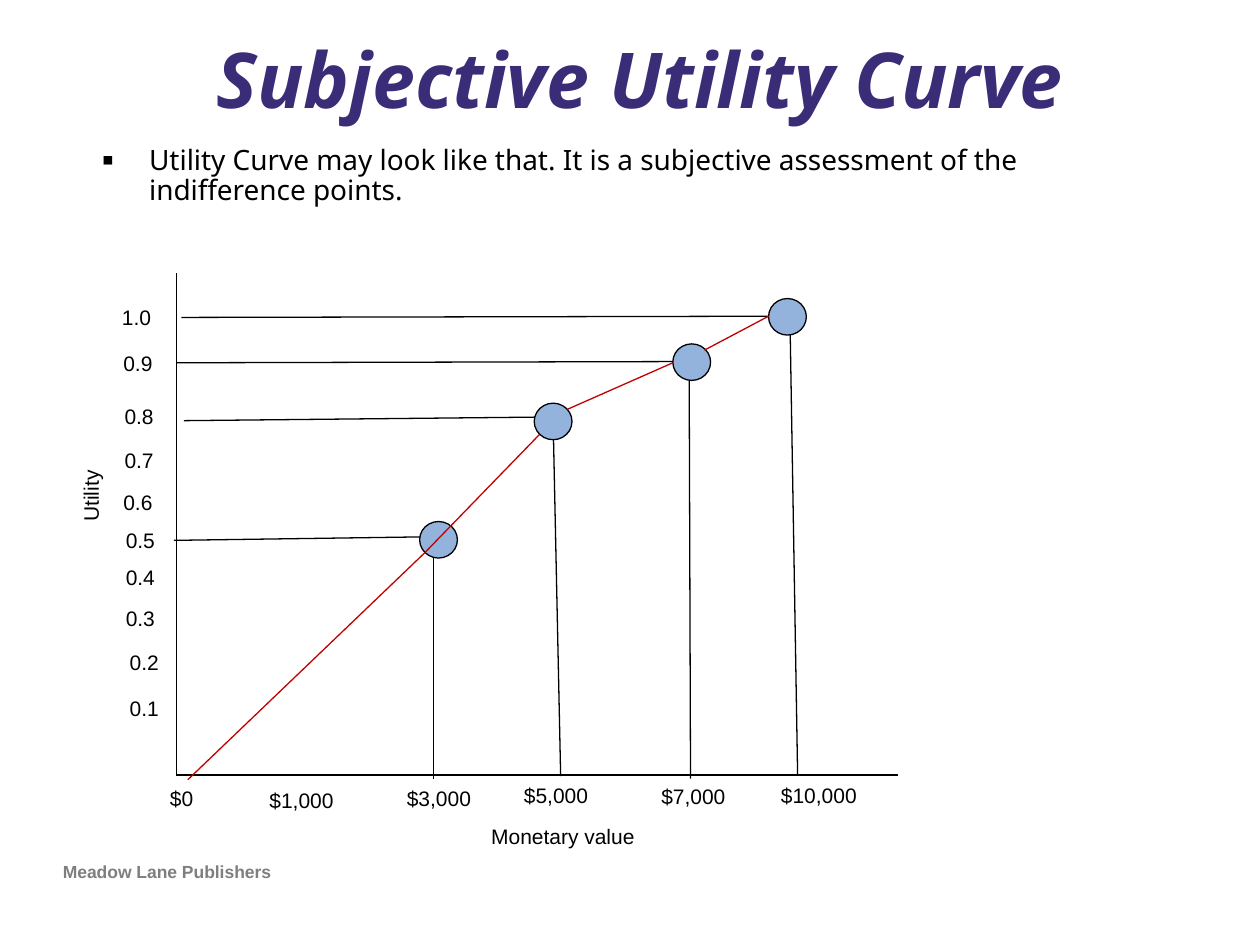
from collections import namedtuple
from dataclasses import dataclass

from lxml.etree import SubElement
from pptx import Presentation
from pptx.dml.color import RGBColor
from pptx.enum.shapes import MSO_CONNECTOR, MSO_SHAPE
from pptx.enum.text import MSO_ANCHOR, MSO_AUTO_SIZE, PP_ALIGN
from pptx.oxml.ns import qn
from pptx.util import Pt

Box = namedtuple("Box", "left top width height")
# One assessed point: its drop line, its guide line and its marker corner
Assessment = namedtuple("Assessment", "drop guide marker")


@dataclass(frozen=True)
class Theme:
    title: RGBColor = RGBColor(0x3A, 0x2C, 0x76)
    ink: RGBColor = RGBColor(0, 0, 0)
    footer: RGBColor = RGBColor(0x7F, 0x7F, 0x7F)
    marker: RGBColor = RGBColor(0x93, 0xB3, 0xDD)
    curve: RGBColor = RGBColor(0xC0, 0, 0)
    heading_font: str = "Noto Sans"
    label_font: str = "Arial"
    title_size: int = 44
    body_size: int = 16
    label_size: int = 12
    footer_size: int = 10
    line_width: float = 0.75


THEME = Theme()
LABEL_HEIGHT = 21.6
MARKER_WIDTH, MARKER_HEIGHT = 21.6, 20.9

# All chart places are offsets from the top left corner of the plot box
MONEY_LABELS = [
    ("$0", -10.8, 289.4, 34.6),
    ("$1,000", 46.1, 290.2, 55.4),
    ("$3,000", 124.6, 289.4, 55.4),
    ("$5,000", 191.5, 287.3, 55.4),
    ("$7,000", 270, 288, 55.4),
    ("$10,000", 338.4, 287.3, 67),
]
UTILITY_LABELS = [
    ("0.1", -33.8, 237.6), ("0.2", -33.8, 211.7),
    ("0.3", -36, 186.5), ("0.4", -36, 162.7),
    ("0.5", -36, 141.8), ("0.6", -37.4, 120.2),
    ("0.7", -36.7, 95.8), ("0.8", -36.7, 70.6),
    ("0.9", -37.4, 40.3), ("1.0", -38.2, 14.4),
]
ASSESSMENTS = [
    Assessment((350.6, 24.5, 355, 286.6), (2.9, 25.2, 350.6, 24.5), (338.4, 14.4)),
    Assessment((293, 49, 293.8, 288.7), (0, 51.1, 293, 50.4), (283.7, 40.3)),
    Assessment((215.3, 85, 219.6, 287.3), (4.3, 84.2, 213.1, 82.1), (204.5, 74.2)),
    Assessment((146.9, 149.8, 146.9, 288.7), (-1.4, 152.6, 148.3, 150.5), (139, 141.8)),
]
CURVE = [
    (6.5, 289.4, 141.8, 159.8),
    (141.8, 159.8, 207.4, 92.2),
    (223.2, 77.8, 283.7, 51.1),
    (301.7, 43.9, 338.4, 24.5),
]


def add_text(slide, text, box, *, size=THEME.label_size, font=THEME.label_font,
             color=THEME.ink, bold=False, italic=False, align=PP_ALIGN.LEFT,
             anchor=MSO_ANCHOR.TOP, spacing=None, grow=False, rotation=0):
    shape = slide.shapes.add_textbox(*map(Pt, box))
    shape.rotation = rotation
    frame = shape.text_frame
    frame.word_wrap = True
    frame.vertical_anchor = anchor
    frame.auto_size = MSO_AUTO_SIZE.SHAPE_TO_FIT_TEXT if grow else MSO_AUTO_SIZE.NONE
    paragraph = frame.paragraphs[0]
    paragraph.alignment = align
    paragraph.line_spacing = spacing
    run = paragraph.add_run()
    run.text = text
    run.font.name = font
    run.font.size = Pt(size)
    run.font.bold = bold
    run.font.italic = italic
    run.font.color.rgb = color
    return paragraph


def add_bullet(paragraph, color, indent=27):
    properties = paragraph._p.get_or_add_pPr()
    properties.set("marL", str(Pt(indent)))
    properties.set("indent", str(-Pt(indent)))
    bullet_color = SubElement(properties, qn("a:buClr"))
    SubElement(bullet_color, qn("a:srgbClr"), val=str(color))
    SubElement(properties, qn("a:buSzPct"), val="123000")
    SubElement(properties, qn("a:buFont"), typeface=THEME.label_font)
    SubElement(properties, qn("a:buChar"), char="▪")


def add_line(slide, box, ends, color=THEME.ink):
    x1, y1, x2, y2 = ends
    line = slide.shapes.add_connector(
        MSO_CONNECTOR.STRAIGHT,
        Pt(box.left + x1), Pt(box.top + y1), Pt(box.left + x2), Pt(box.top + y2))
    line.line.color.rgb = color
    line.line.width = Pt(THEME.line_width)
    SubElement(line._element.spPr, qn("a:effectLst"))


def add_marker(slide, box, corner):
    x, y = corner
    marker = slide.shapes.add_shape(
        MSO_SHAPE.OVAL, Pt(box.left + x), Pt(box.top + y),
        Pt(MARKER_WIDTH), Pt(MARKER_HEIGHT))
    marker.shadow.inherit = False
    marker.fill.solid()
    marker.fill.fore_color.rgb = THEME.marker
    marker.line.color.rgb = THEME.ink
    marker.line.width = Pt(THEME.line_width)


def add_label(slide, box, text, x, y, width, rotation=0):
    place = Box(box.left + x, box.top + y, width, LABEL_HEIGHT)
    add_text(slide, text, place, grow=True, rotation=rotation)


def add_title(slide, box):
    add_text(slide, " Subjective Utility Curve", box, size=THEME.title_size,
             font=THEME.heading_font, color=THEME.title, bold=True, italic=True,
             align=PP_ALIGN.CENTER, anchor=MSO_ANCHOR.MIDDLE, spacing=0.9)


def add_body(slide, box):
    paragraph = add_text(
        slide,
        "Utility Curve may look like that. It is a subjective assessment "
        "of the indifference points.",
        box, size=THEME.body_size, font=THEME.heading_font, spacing=0.9)
    add_bullet(paragraph, THEME.ink)


def add_footer(slide, box):
    add_text(slide, "Meadow Lane Publishers", box, size=THEME.footer_size,
             color=THEME.footer, bold=True)


def add_utility_chart(slide, box):
    # Axes
    add_line(slide, box, (0, box.height, box.width, box.height))
    add_line(slide, box, (0, 0, 0, box.height))

    # Axis titles and scale labels
    add_label(slide, box, "Utility", -89.3, 97.9, 80.6, rotation=270)
    add_label(slide, box, "Monetary value", 172.8, 311, 128.9)
    for text, x, y, width in MONEY_LABELS:
        add_label(slide, box, text, x, y, width)
    for text, x, y in UTILITY_LABELS:
        add_label(slide, box, text, x, y, 41)

    # Assessed points with their guides to both axes
    for assessment in ASSESSMENTS:
        add_line(slide, box, assessment.drop)
        add_line(slide, box, assessment.guide)
        add_marker(slide, box, assessment.marker)

    # Utility curve
    for segment in CURVE:
        add_line(slide, box, segment, THEME.curve)


def main():
    presentation = Presentation()
    presentation.slide_width = Pt(720)
    presentation.slide_height = Pt(540)
    slide = presentation.slides.add_slide(presentation.slide_layouts[6])
    add_title(slide, Box(54, 21.6, 612, 51.8))
    add_body(slide, Box(51.1, 79.9, 617.8, 362.9))
    add_footer(slide, Box(28.8, 488.2, 298, 20.2))
    add_utility_chart(slide, Box(100.8, 156.2, 412.6, 286.6))
    presentation.save("out.pptx")


if __name__ == "__main__":
    main()
